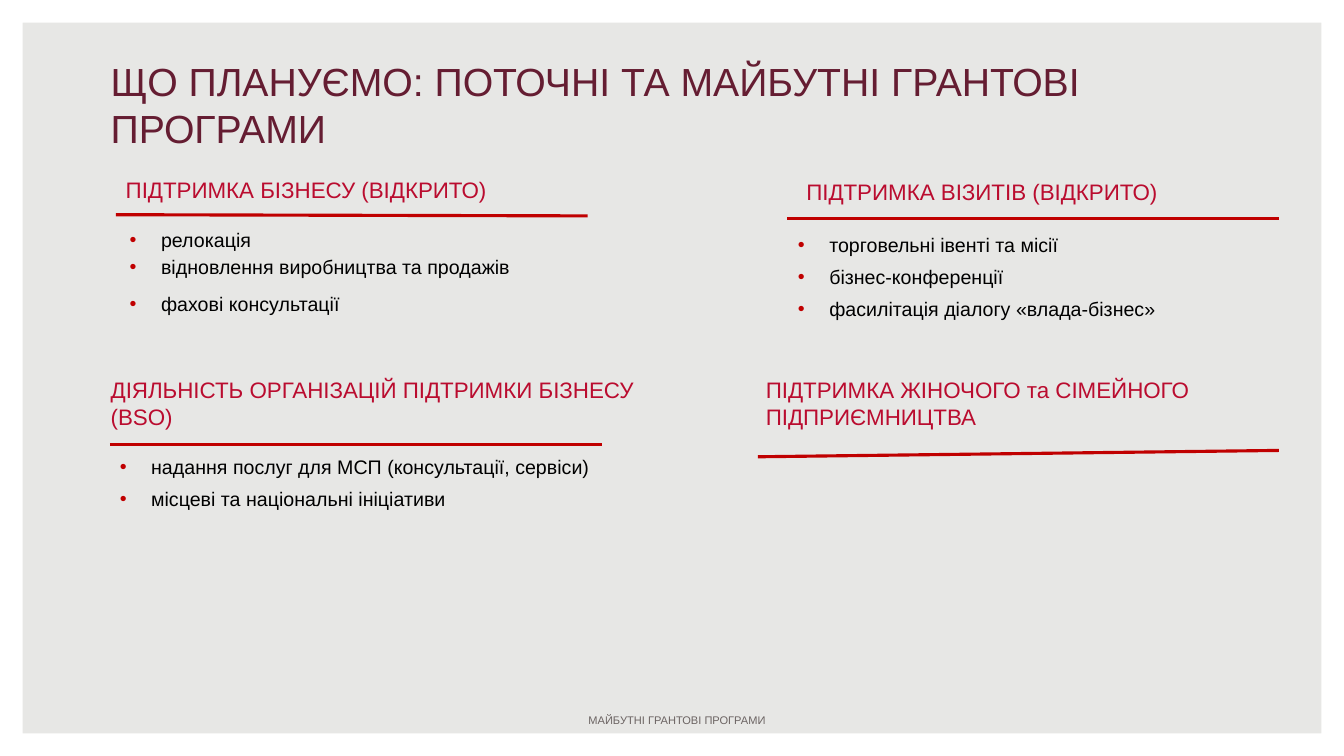
from dataclasses import dataclass

from lxml import etree
from pptx import Presentation
from pptx.dml.color import RGBColor
from pptx.enum.shapes import MSO_CONNECTOR, MSO_SHAPE
from pptx.enum.text import MSO_ANCHOR, PP_ALIGN
from pptx.oxml.ns import qn
from pptx.shapes.connector import Connector
from pptx.slide import Slide
from pptx.text.text import _Paragraph
from pptx.util import Cm, Pt

FRAME, STRAIGHT = MSO_SHAPE.FRAME, MSO_CONNECTOR.STRAIGHT
TOP, MIDDLE, BOTTOM = MSO_ANCHOR.TOP, MSO_ANCHOR.MIDDLE, MSO_ANCHOR.BOTTOM
LEFT, CENTER = PP_ALIGN.LEFT, PP_ALIGN.CENTER

COLORS = {
    "page": "E7E7E5",
    "frame": "FFFFFF",
    "title": "651D32",
    "heading": "BA0C2F",
    "accent": "C00000",
    "body": "000000",
    "footer": "6C6463",
}
FORMATS = {
    "title": {"name": "Arial", "size": Pt(28)},
    "heading": {"name": "Arial", "size": Pt(16)},
    "body": {"name": "Arial", "size": Pt(14)},
    "footer": {"name": "Arial", "size": Pt(7.9)},
}
PAGE_WIDTH, PAGE_HEIGHT = 33.87, 19.05
BULLET_INDENT = Cm(0.79)

Area = tuple[float, float, float, float]


@dataclass(frozen=True)
class Line:
    """One paragraph with its spacing in points."""
    text: str
    before: float = 0
    after: float = 0


@dataclass(frozen=True)
class Program:
    """A heading, the rule under it and its bullets; lengths in centimetres."""
    heading: list[Line]
    heading_area: Area
    rule: Area
    bullets: list[Line]
    bullets_area: Area | None = None


PROGRAMS = [
    Program(
        [Line("ПІДТРИМКА БІЗНЕСУ (ВІДКРИТО)")], (2.92, 4.32, 14.12, 0.94),
        (2.92, 5.41, 14.81, 5.44),
        [Line("релокація"),
         Line("відновлення виробництва та продажів", 3),
         Line("фахові консультації", 9, 3)],
        (3.02, 5.61, 13.82, 2.59),
    ),
    Program(
        [Line("ДІЯЛЬНІСТЬ ОРГАНІЗАЦІЙ ПІДТРИМКИ БІЗНЕСУ (BSO)")],
        (2.54, 9.35, 13.82, 1.63),
        (2.77, 11.2, 15.16, 11.2),
        [Line("надання послуг для МСП (консультації, сервіси)"),
         Line("місцеві та національні ініціативи", 6)],
        (2.77, 11.35, 13.11, 2.69),
    ),
    Program(
        [Line("ПІДТРИМКА ВІЗИТІВ (ВІДКРИТО)")], (20.07, 4.37, 12.4, 0.94),
        (19.84, 5.51, 32.23, 5.51),
        [Line("торговельні івенті та місії"),
         Line("бізнес-конференції", 6),
         Line("фасилітація діалогу «влада-бізнес»", 6, 6)],
        (19.86, 5.74, 12.34, 2.49),
    ),
    Program(
        [Line("ПІДТРИМКА ЖІНОЧОГО та СІМЕЙНОГО"), Line("ПІДПРИЄМНИЦТВА")],
        (19.05, 9.35, 13.82, 1.63),
        (19.1, 11.51, 32.23, 11.35),
        [],
    ),
]


def color(name: str) -> RGBColor:
    return RGBColor.from_string(COLORS[name])


def add_bullet(para: _Paragraph) -> None:
    properties = para._p.get_or_add_pPr()
    properties.set("marL", str(BULLET_INDENT))
    properties.set("indent", str(-BULLET_INDENT))
    bullet_color = etree.SubElement(properties, qn("a:buClr"))
    etree.SubElement(bullet_color, qn("a:srgbClr"), val=COLORS["accent"])
    etree.SubElement(properties, qn("a:buFont"), typeface="Arial")
    etree.SubElement(properties, qn("a:buChar"), char="•")


def add_text(shapes, area: Area, lines: list[Line], style: str,
             anchor: MSO_ANCHOR = TOP, align: PP_ALIGN = LEFT,
             bulleted: bool = False) -> None:
    box = shapes.add_textbox(*map(Cm, area))
    frame = box.text_frame
    frame.word_wrap = True
    frame.vertical_anchor = anchor
    for index, line in enumerate(lines):
        para = frame.add_paragraph() if index else frame.paragraphs[0]
        if bulleted:
            add_bullet(para)
        para.alignment = align
        para.space_before, para.space_after = Pt(line.before), Pt(line.after)
        span = para.add_run()
        span.text = line.text
        for attribute, value in FORMATS[style].items():
            setattr(span.font, attribute, value)
        span.font.color.rgb = color(style)


def add_rule(shapes, ends: Area) -> Connector:
    rule = shapes.add_connector(STRAIGHT, *map(Cm, ends))
    rule.line.color.rgb = color("accent")
    rule.line.width = Pt(2.25)
    etree.SubElement(rule._element.spPr, qn("a:effectLst"))
    return rule


def add_frame(page: Slide) -> None:
    frame = page.shapes.add_shape(FRAME, 0, 0, Cm(PAGE_WIDTH), Cm(PAGE_HEIGHT))
    frame.adjustments[0] = 0.03
    frame.shadow.inherit = False
    frame.fill.solid()
    frame.fill.fore_color.rgb = color("frame")
    frame.line.fill.background()


def add_program(page: Slide, program: Program) -> None:
    shapes = page.shapes.add_group_shape().shapes
    if program.bullets_area:
        add_text(shapes, program.bullets_area, program.bullets, "body", bulleted=True)
    add_text(shapes, program.heading_area, program.heading, "heading")
    add_rule(shapes, program.rule)


def main() -> None:
    deck = Presentation()
    deck.slide_width, deck.slide_height = Cm(PAGE_WIDTH), Cm(PAGE_HEIGHT)
    page = deck.slides.add_slide(deck.slide_layouts[6])
    page.background.fill.solid()
    page.background.fill.fore_color.rgb = color("page")
    add_frame(page)
    add_text(page.shapes, (2.54, 1.3, 28.78, 2.64),
             [Line("ЩО ПЛАНУЄМО: ПОТОЧНІ ТА МАЙБУТНІ ГРАНТОВІ ПРОГРАМИ")],
             "title", BOTTOM)
    for program in PROGRAMS:
        add_program(page, program)
    add_text(page.shapes, (10.67, 17.86, 12.78, 0.58),
             [Line("МАЙБУТНІ ГРАНТОВІ ПРОГРАМИ")], "footer", MIDDLE, CENTER)
    deck.save("out.pptx")


if __name__ == "__main__":
    main()
